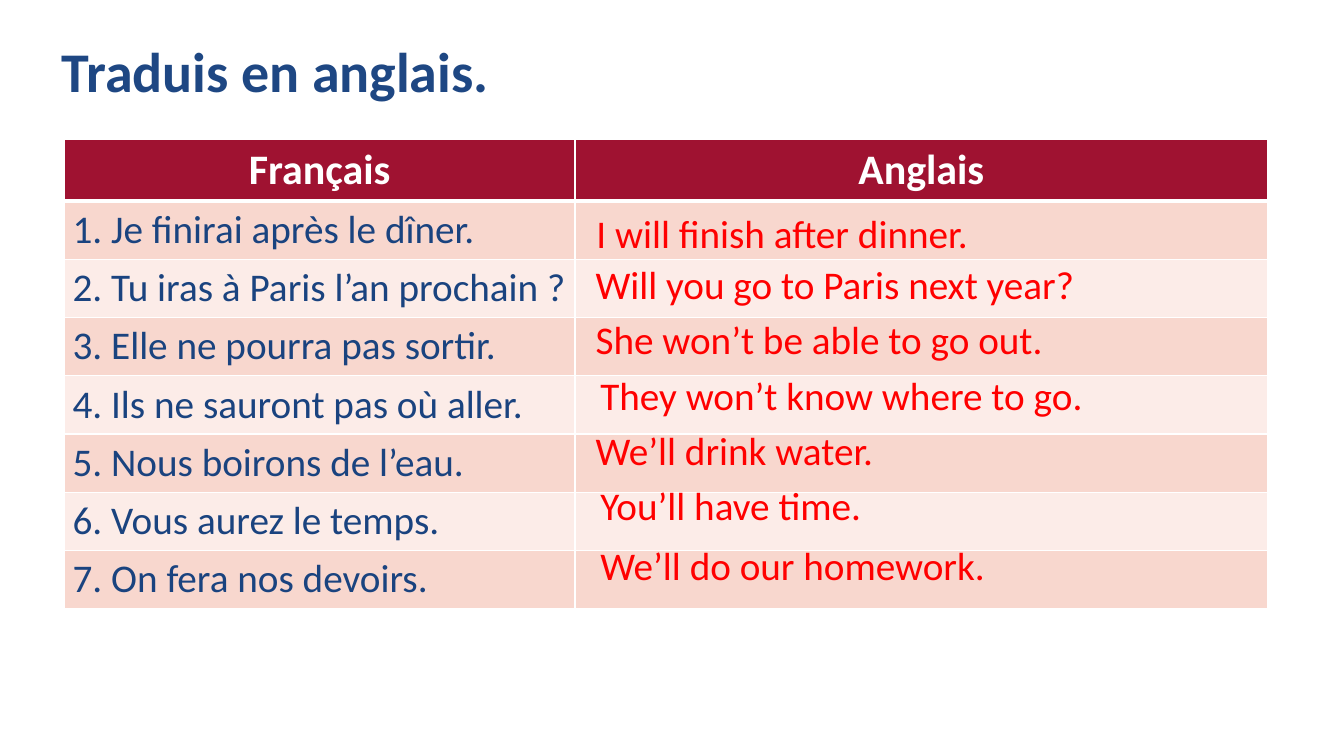
from lxml import etree
from pptx import Presentation
from pptx.dml.color import RGBColor
from pptx.enum.text import MSO_ANCHOR, MSO_AUTO_SIZE, PP_ALIGN
from pptx.oxml.ns import qn
from pptx.util import Cm, Pt

MIDDLE = MSO_ANCHOR.MIDDLE
NO_FIT, GROW = MSO_AUTO_SIZE.NONE, MSO_AUTO_SIZE.SHAPE_TO_FIT_TEXT
LEFT, CENTER = PP_ALIGN.LEFT, PP_ALIGN.CENTER

FONT = "Calibri"
TITLE_BLUE, TEXT_BLUE = "1E4783", "1A437F"
WHITE, ANSWER_RED, HEADER_RED = "FFFFFF", "FF0000", "9F1231"
BANDS = ("F8D7CE", "FCECE8")

HEADERS = ("Français", "Anglais")
COLUMN_WIDTHS = (12.86, 17.46)
HEADER_HEIGHT, ROW_HEIGHT = 1.53, 1.46
SENTENCES = (
    "Je finirai après le dîner.",
    "Tu iras à Paris l’an prochain ?",
    "Elle ne pourra pas sortir.",
    "Ils ne sauront pas où aller.",
    "Nous boirons de l’eau.",
    "Vous aurez le temps.",
    "On fera nos devoirs.",
)
# Text, then left, top, width and height in centimetres
ANSWERS = (
    ("I will finish after dinner.", 14.78, 5.16, 16.31, 2.64),
    ("Will you go to Paris next year?", 14.76, 6.43, 16.31, 1.45),
    ("She won’t be able to go out.", 14.76, 7.82, 16.31, 1.45),
    ("They won’t know where to go.", 14.88, 9.22, 16.31, 1.45),
    ("We’ll drink water.", 14.76, 10.62, 16.31, 1.45),
    ("You’ll have time.", 14.88, 12.01, 17.07, 1.45),
    ("We’ll do our homework.", 14.88, 13.51, 16.31, 2.64),
)


def color(hex_string):
    return RGBColor.from_string(hex_string)


def write(text_frame, text, size=28, hex_color=TEXT_BLUE, bold=False,
          align=LEFT, line_spacing=None):
    paragraph = text_frame.paragraphs[0]
    paragraph.alignment = align
    paragraph.line_spacing = line_spacing
    run = paragraph.add_run()
    run.text = text
    run.font.name = FONT
    run.font.size = Pt(size)
    run.font.bold = bold
    run.font.color.rgb = color(hex_color)


def format_cell(cell, fill, bottom_width=1):
    """Give a cell white borders and a solid fill."""
    properties = cell._tc.get_or_add_tcPr()
    widths = {"lnL": 1, "lnR": 1, "lnT": 1, "lnB": bottom_width}
    for side, width in widths.items():
        line = etree.SubElement(properties, qn(f"a:{side}"), w=str(Pt(width)))
        solid = etree.SubElement(line, qn("a:solidFill"))
        etree.SubElement(solid, qn("a:srgbClr"), val=WHITE)
    cell.fill.solid()
    cell.fill.fore_color.rgb = color(fill)
    cell.margin_left = cell.margin_right = Cm(0.2)
    cell.margin_top = cell.margin_bottom = Cm(0.13)


def add_title(slide, text):
    title = slide.shapes.title
    title.left, title.top = Cm(1.3), Cm(1.02)
    title.width, title.height = Cm(29.21), Cm(1.73)
    title.text_frame.auto_size = NO_FIT
    title.text_frame.vertical_anchor = MIDDLE
    write(title.text_frame, text, size=40, hex_color=TITLE_BLUE, bold=True,
          line_spacing=0.9)


def add_sentence_table(slide):
    height = HEADER_HEIGHT + len(SENTENCES) * ROW_HEIGHT
    table = slide.shapes.add_table(
        len(SENTENCES) + 1, len(HEADERS), Cm(1.63), Cm(3.51),
        Cm(sum(COLUMN_WIDTHS)), Cm(height)).table
    for column, width in zip(table.columns, COLUMN_WIDTHS):
        column.width = Cm(width)
    table.rows[0].height = Cm(HEADER_HEIGHT)
    for index, header in enumerate(HEADERS):
        cell = table.cell(0, index)
        format_cell(cell, HEADER_RED, bottom_width=3)
        write(cell.text_frame, header, size=30, hex_color=WHITE, bold=True,
              align=CENTER)
    for number, sentence in enumerate(SENTENCES, start=1):
        table.rows[number].height = Cm(ROW_HEIGHT)
        for index in range(len(HEADERS)):
            format_cell(table.cell(number, index), BANDS[(number - 1) % 2])
        write(table.cell(number, 0).text_frame, f"{number}. {sentence}")


def add_answer(slide, text, left, top, width, height):
    box = slide.shapes.add_textbox(Cm(left), Cm(top), Cm(width), Cm(height))
    box.text_frame.word_wrap = True
    box.text_frame.auto_size = GROW
    write(box.text_frame, text, hex_color=ANSWER_RED)


def main():
    presentation = Presentation()
    presentation.slide_width, presentation.slide_height = Cm(33.87), Cm(19.05)
    slide = presentation.slides.add_slide(presentation.slide_layouts[5])
    add_title(slide, "Traduis en anglais.")
    add_sentence_table(slide)
    for answer in ANSWERS:
        add_answer(slide, *answer)
    presentation.save("out.pptx")


if __name__ == "__main__":
    main()
